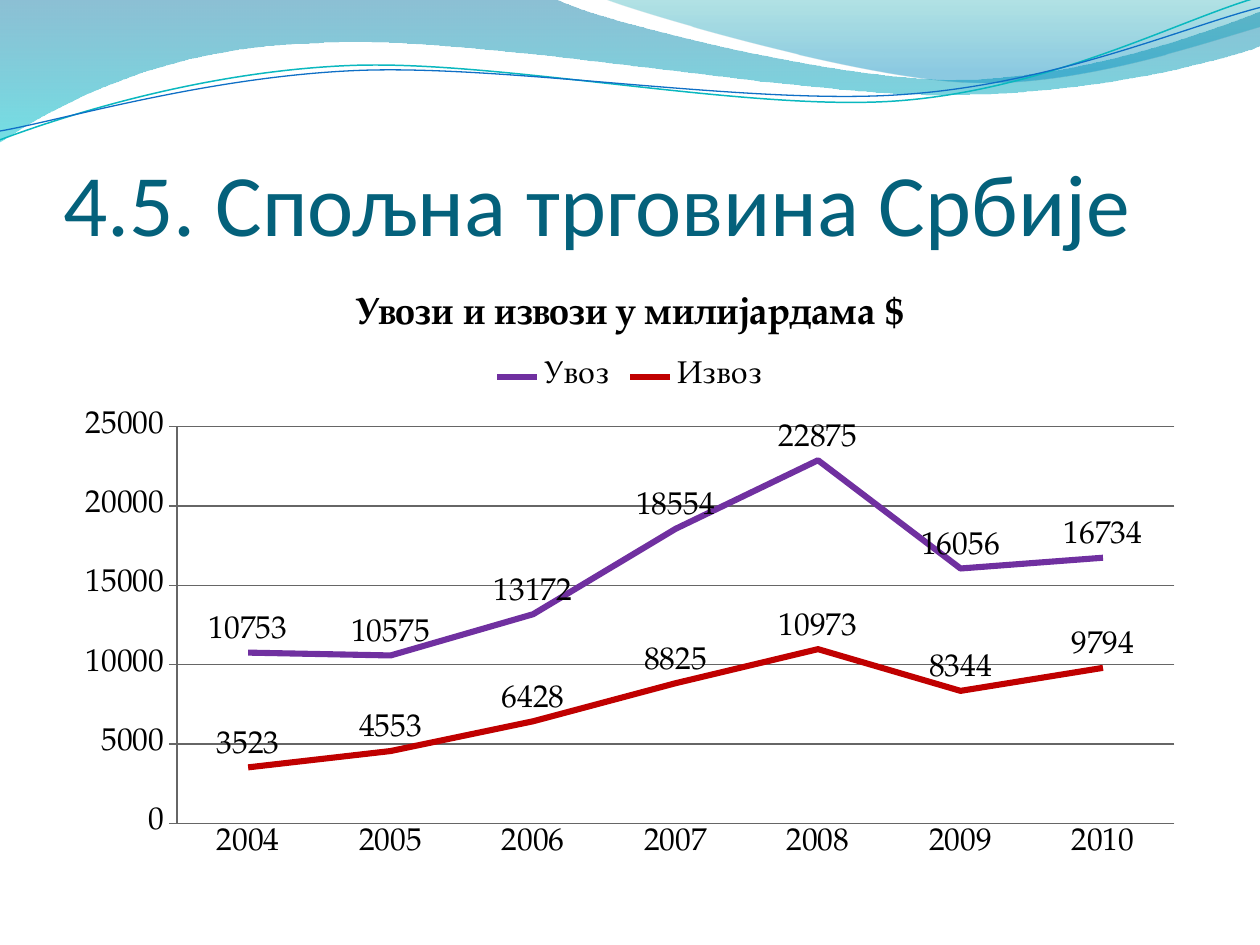
from dataclasses import dataclass
from math import cos, radians, sin

from lxml import etree
from pptx import Presentation
from pptx.chart.data import CategoryChartData
from pptx.dml.color import RGBColor
from pptx.enum.chart import (XL_CHART_TYPE, XL_LABEL_POSITION, XL_LEGEND_POSITION,
                             XL_MARKER_STYLE, XL_TICK_MARK)
from pptx.enum.text import MSO_ANCHOR, MSO_AUTO_SIZE, PP_ALIGN
from pptx.oxml.ns import qn
from pptx.util import Inches, Pt

LINE_CHART = XL_CHART_TYPE.LINE
LABEL_ABOVE = XL_LABEL_POSITION.ABOVE
LEGEND_TOP = XL_LEGEND_POSITION.TOP
NO_MARKER = XL_MARKER_STYLE.NONE
TICK_NONE, TICK_CROSS = XL_TICK_MARK.NONE, XL_TICK_MARK.CROSS
TITLE_ONLY = 5
CHART_FONT = "TeX Gyre Pagella"
GRID_COLOR = "666666"
LINE_TILT = -2.7  # degrees

Point = tuple[float, float]


@dataclass
class Stop:
    position: float
    color: str
    alpha: int  # percent


@dataclass
class Wave:
    """Outline in inches: two numbers are a straight step, six a Bezier curve."""
    start: Point
    steps: list[tuple[float, ...]]
    stops: tuple[Stop, ...] = ()
    line_color: str = ""
    line_width: float = 0
    tilt: float = 0
    center: Point = (0, 0)


@dataclass
class TradeSeries:
    name: str
    values: list[int]
    color: str


WAVES = [
    Wave((0, 0), [(4.4, -0.01), (4.76, 0.17, 6.64, 0.63, 7.58, 0.63),
                  (8.53, 0.63, 9.58, 0.26, 10, 0.09), (10.01, 0.36),
                  (9.83, 0.44, 8.7, 0.76, 7.46, 0.75),
                  (6.22, 0.75, 3.82, 0.28, 2.57, 0.34),
                  (1.29, 0.36, 0.46, 0.83, -0.01, 1.13), (0, 0)],
         stops=(Stop(0, "0074A1", 45), Stop(1, "00C6CF", 55))),
    Wave((4.79, -0.01), [(5.09, 0.11, 6.82, 0.62, 7.69, 0.65),
                         (8.56, 0.69, 9.61, 0.32, 10, 0.21), (10, 0), (4.79, -0.01)],
         stops=(Stop(0, "00A1A9", 30), Stop(0.8, "008BBF", 45))),
    Wave((0, 1.11), [(0.48, 0.93, 1.58, 0.57, 2.77, 0.52),
                     (3.95, 0.47, 5.93, 0.89, 7.13, 0.8),
                     (8.33, 0.71, 9.38, 0.15, 9.98, -0.02)],
         line_color="0AB8BF", line_width=0.85, tilt=LINE_TILT, center=(4.99, 0.575)),
    Wave((0, 1.04), [(0.47, 0.96, 1.64, 0.61, 2.83, 0.56),
                     (4.03, 0.51, 5.97, 0.84, 7.17, 0.75),
                     (8.36, 0.67, 9.41, 0.21, 10, 0.06)],
         line_color="0F6FC6", line_width=0.75, tilt=LINE_TILT, center=(5, 0.59)),
]

YEARS = [str(year) for year in range(2004, 2011)]
TRADE = [
    TradeSeries("Увоз", [10753, 10575, 13172, 18554, 22875, 16056, 16734], "7030A0"),
    TradeSeries("Извоз", [3523, 4553, 6428, 8825, 10973, 8344, 9794], "C00000"),
]


def rgb(color: str) -> RGBColor:
    return RGBColor.from_string(color)


def style_font(font, size: float, name: str, color: str, bold: bool = False) -> None:
    font.size, font.name, font.bold = Pt(size), name, bold
    font.color.rgb = rgb(color)


def style_line(line, color: str, width: float) -> None:
    line.color.rgb = rgb(color)
    line.width = Pt(width)


def level_point(wave: Wave, x: float, y: float) -> tuple[int, int]:
    """Undo the tilt of a wave, which the shape's own rotation brings back."""
    angle = radians(-wave.tilt)
    center_x, center_y = wave.center
    dx, dy = x - center_x, y - center_y
    return (Inches(center_x + dx * cos(angle) - dy * sin(angle)),
            Inches(center_y + dx * sin(angle) + dy * cos(angle)))


def add_wave(page, wave: Wave) -> None:
    points = [level_point(wave, *step[index:index + 2])
              for step in wave.steps for index in range(0, len(step), 2)]
    builder = page.shapes.build_freeform(*level_point(wave, *wave.start))
    builder.add_line_segments(points, close=bool(wave.stops))
    shape = builder.convert_to_shape()
    shape.shadow.inherit = False
    shape.rotation = wave.tilt

    # Join each three control points into one curve
    segments = iter(list(shape.element.spPr.iter(qn("a:lnTo"))))
    for step in wave.steps:
        segment = next(segments)
        if len(step) == 6:
            segment.tag = qn("a:cubicBezTo")
            for _ in range(2):
                extra = next(segments)
                segment.append(extra[0])
                extra.getparent().remove(extra)

    if not wave.stops:
        shape.fill.background()
        style_line(shape.line, wave.line_color, wave.line_width)
        return
    shape.line.fill.background()
    shape.fill.gradient()
    shape.fill.gradient_angle = 270  # top to bottom
    for stop, gradient_stop in zip(wave.stops, shape.fill.gradient_stops):
        gradient_stop.position = stop.position
        gradient_stop.color.rgb = rgb(stop.color)
    # Transparency of the gradient stops
    for stop, color in zip(wave.stops, shape.element.spPr.iter(qn("a:srgbClr"))):
        etree.SubElement(color, qn("a:alpha"), val=str(stop.alpha * 1000))


def add_title(page, text: str) -> None:
    title = page.shapes.title
    title.left, title.top = Inches(0.5), Inches(0.77)
    title.width, title.height = Inches(9), Inches(1.25)
    frame = title.text_frame
    frame.auto_size = MSO_AUTO_SIZE.NONE
    frame.word_wrap = True
    frame.vertical_anchor = MSO_ANCHOR.BOTTOM
    frame.margin_left = frame.margin_right = frame.margin_bottom = 0
    frame.margin_top = Inches(0.05)
    para = frame.paragraphs[0]
    para.alignment = PP_ALIGN.LEFT
    span = para.add_run()
    span.text = text
    style_font(span.font, 50, "Calibri", "04617B")
    # Bring the title in front of the waves
    title.element.getparent().append(title.element)


def add_trade_chart(page, heading: str) -> None:
    data = CategoryChartData()
    data.categories = YEARS
    for trade in TRADE:
        data.add_series(trade.name, trade.values)
    chart = page.shapes.add_chart(LINE_CHART, Inches(0.5), Inches(2.12),
                                  Inches(9), Inches(4.8), data).chart
    style_font(chart.font, 18, CHART_FONT, "000000")

    # Heading and legend
    span = chart.chart_title.text_frame.paragraphs[0].add_run()
    span.text = heading
    style_font(span.font, 21.6, CHART_FONT, "000000", bold=True)
    chart.has_legend = True
    chart.legend.position = LEGEND_TOP
    chart.legend.include_in_layout = False

    # Axes
    years, amounts = chart.category_axis, chart.value_axis
    years.major_tick_mark, amounts.major_tick_mark = TICK_NONE, TICK_CROSS
    amounts.minimum_scale, amounts.maximum_scale, amounts.major_unit = 0, 25000, 5000
    amounts.has_major_gridlines = True
    for item in (years, amounts, amounts.major_gridlines):
        style_line(item.format.line, GRID_COLOR, 0.75)

    # Lines and their value labels
    chart.plots[0].vary_by_categories = False
    for trade, series in zip(TRADE, chart.plots[0].series):
        series.smooth = False
        series.marker.style = NO_MARKER
        style_line(series.format.line, trade.color, 3.5)
        labels = series.data_labels
        labels.show_value = True
        labels.position = LABEL_ABOVE


def main() -> None:
    deck = Presentation()
    deck.slide_width, deck.slide_height = Inches(10), Inches(7.5)
    page = deck.slides.add_slide(deck.slide_layouts[TITLE_ONLY])
    for wave in WAVES:
        add_wave(page, wave)
    add_title(page, "4.5. Спољна трговина Србије")
    add_trade_chart(page, "Увози и извози у милијардама $")
    deck.save("out.pptx")


if __name__ == "__main__":
    main()
